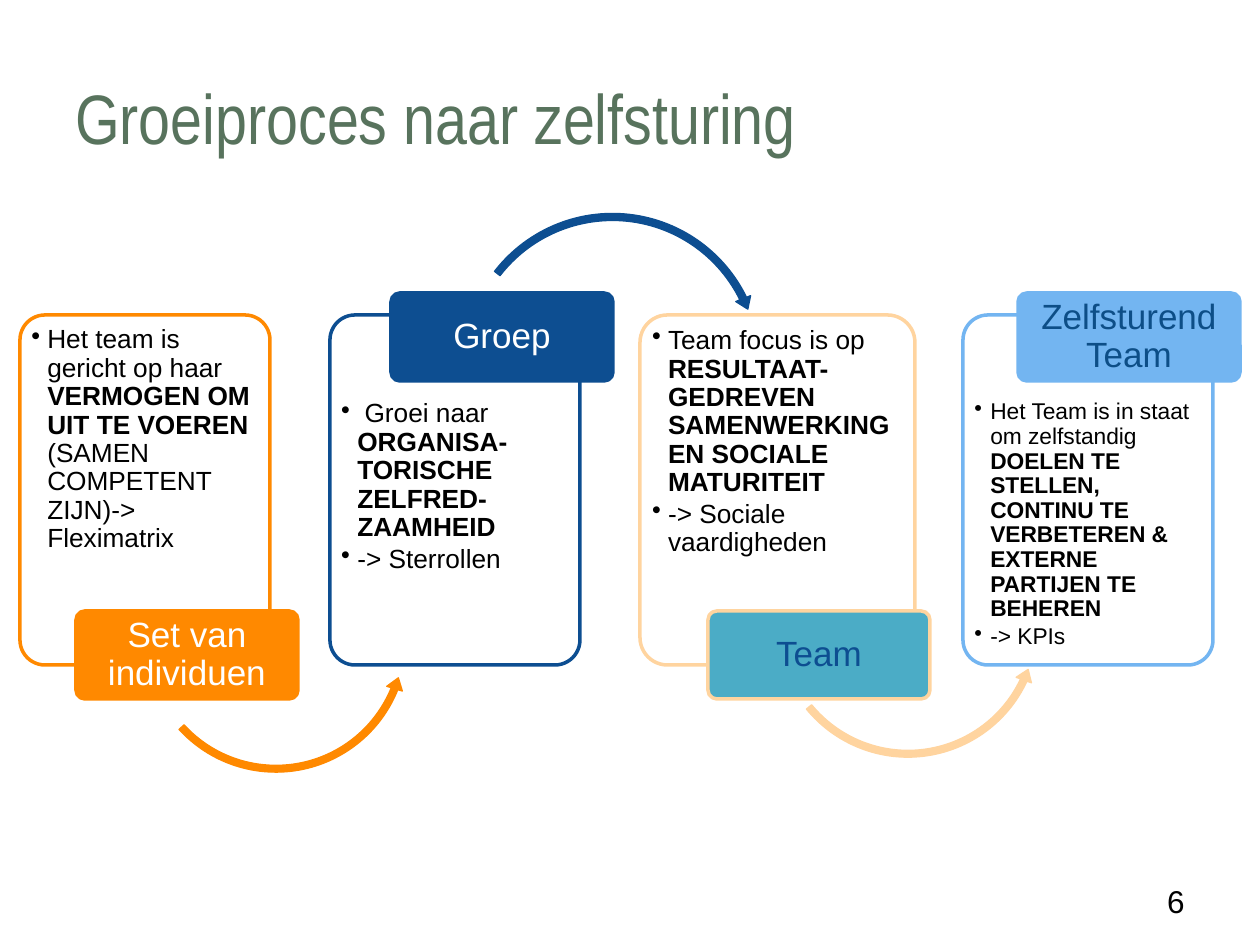
from lxml import etree
from pptx import Presentation
from pptx.dml.color import RGBColor
from pptx.enum.shapes import MSO_SHAPE
from pptx.enum.text import MSO_ANCHOR, PP_ALIGN
from pptx.oxml.ns import qn
from pptx.util import Pt

ROUNDED = MSO_SHAPE.ROUNDED_RECTANGLE
ARC_OVER, ARC_UNDER = MSO_SHAPE.CIRCULAR_ARROW, MSO_SHAPE.LEFT_CIRCULAR_ARROW
TOP, MIDDLE = MSO_ANCHOR.TOP, MSO_ANCHOR.MIDDLE
LEFT, CENTER, RIGHT = PP_ALIGN.LEFT, PP_ALIGN.CENTER, PP_ALIGN.RIGHT
PX = 914400 / 126
ORANGE, NAVY, PEACH, SKY = "FF8900", "0D4E91", "FFD49F", "73B5F1"

prs = Presentation()
prs.slide_width, prs.slide_height = round(1260 * PX), round(945 * PX)
slide = prs.slides.add_slide(prs.slide_layouts[6])


def add_box(kind, box, fill, line, width):
    shape = slide.shapes.add_shape(kind, *[round(v * PX) for v in box])
    shape.shadow.inherit = False
    shape.fill.solid()
    shape.fill.fore_color.rgb = RGBColor.from_string(fill)
    shape.line.color.rgb = RGBColor.from_string(line)
    shape.line.width = Pt(width)
    return shape


def style(paragraph, size, color, align, font="Arial"):
    paragraph.alignment = align
    paragraph.font.size = Pt(size)
    paragraph.font.name = font
    paragraph.font.color.rgb = RGBColor.from_string(color)


# Title and page number
for text, box, size, color, align, font in [
    ("Groeiproces naar zelfsturing", (63, 38, 1134, 157), 40, "58735D", LEFT, "Arial Narrow"),
    ("6", (903, 876, 294, 50), 18, "000000", RIGHT, "Arial"),
]:
    frame = slide.shapes.add_textbox(*[round(v * PX) for v in box]).text_frame
    frame.word_wrap = True
    frame.vertical_anchor = MIDDLE
    frame.text = text
    style(frame.paragraphs[0], size, color, align, font)

# Stages: card left, card width, text top inset, text size, card colour,
# bullets as (plain, bold, plain), label (text, left, top, fill, text colour),
# arrow to the next stage (kind, left, top, size, rotation, adjustments)
UNDER_ADJ = (0.025, 3.091, 11.242, 80.641, 0.03)
OVER_ADJ = (0.023, 2.716, 202.123, 132.349, 0.026)
UPPER, LOWER = 293, 611
stages = [
    (20, 250, 4, 15, ORANGE,
     [("Het team is gericht op haar ", "VERMOGEN OM UIT TE VOEREN ",
       "(SAMEN COMPETENT ZIJN)-> Fleximatrix")],
     ("Set van individuen", 76, LOWER, ORANGE, "FFFFFF"),
     (ARC_UNDER, 140, 505, 272, 3.2, UNDER_ADJ)),
    (330, 250, 78, 15, NAVY,
     [(" Groei naar ", "ORGANISA-TORISCHE ZELFRED-ZAAMHEID", ""),
      ("-> Sterrollen", "", "")],
     ("Groep", 391, UPPER, NAVY, "FFFFFF"),
     (ARC_OVER, 459, 209, 307, 357.1, OVER_ADJ)),
    (640, 275, 4, 15, PEACH,
     [("Team focus is op ", "RESULTAAT-GEDREVEN SAMENWERKING EN SOCIALE MATURITEIT", ""),
      ("-> Sociale vaardigheden", "", "")],
     ("Team", 708, LOWER, "4BACC6", NAVY),
     (ARC_UNDER, 772, 490, 272, 6.3, UNDER_ADJ)),
    (963, 250, 78, 13, SKY,
     [("Het Team is in staat om zelfstandig ",
       "DOELEN TE STELLEN, CONTINU TE VERBETEREN & EXTERNE PARTIJEN TE BEHEREN", ""),
      ("-> KPIs", "", "")],
     ("Zelfsturend Team", 1018, UPPER, SKY, "0D4E87"),
     None),
]

for left, width, text_top, size, color, bullets, label, arrow in stages:
    # Card with bullets
    card = add_box(ROUNDED, (left, 315, width, 350), "FFFFFF", color, 2)
    card.adjustments[0] = 0.1
    frame = card.text_frame
    frame.word_wrap = True
    frame.vertical_anchor = TOP
    frame.margin_left = frame.margin_right = frame.margin_bottom = round(4 * PX)
    frame.margin_top = round(text_top * PX)
    for i, parts in enumerate(bullets):
        paragraph = frame.paragraphs[0] if i == 0 else frame.add_paragraph()
        paragraph.level = 1
        paragraph.line_spacing = 0.9
        paragraph.space_after = Pt(2)
        props = paragraph._p.get_or_add_pPr()
        props.set("marL", str(round(16 * PX)))
        props.set("indent", str(round(-16 * PX)))
        etree.SubElement(props, qn("a:buChar")).set("char", "•")
        style(paragraph, size, "000000", LEFT)
        for part, bold in zip(parts, (False, True, False)):
            if part:
                run = paragraph.add_run()
                run.text = part
                run.font.bold = bold

    # Arrow to the next stage
    if arrow:
        kind, arrow_left, arrow_top, side, rotation, adjustments = arrow
        arc = add_box(kind, (arrow_left, arrow_top, side, side), color, color, 0.75)
        arc.rotation = rotation
        for i, value in enumerate(adjustments):
            arc.adjustments[i] = value

    # Label
    text, label_left, label_top, fill, text_color = label
    tag = add_box(ROUNDED, (label_left, label_top, 222, 88), fill, color, 2)
    tag.adjustments[0] = 0.1
    frame = tag.text_frame
    frame.word_wrap = True
    frame.vertical_anchor = MIDDLE
    frame.margin_left = frame.margin_right = round(5 * PX)
    frame.margin_top = frame.margin_bottom = round(4 * PX)
    frame.text = text
    frame.paragraphs[0].line_spacing = 0.9
    style(frame.paragraphs[0], 20, text_color, CENTER)

prs.save("out.pptx")
